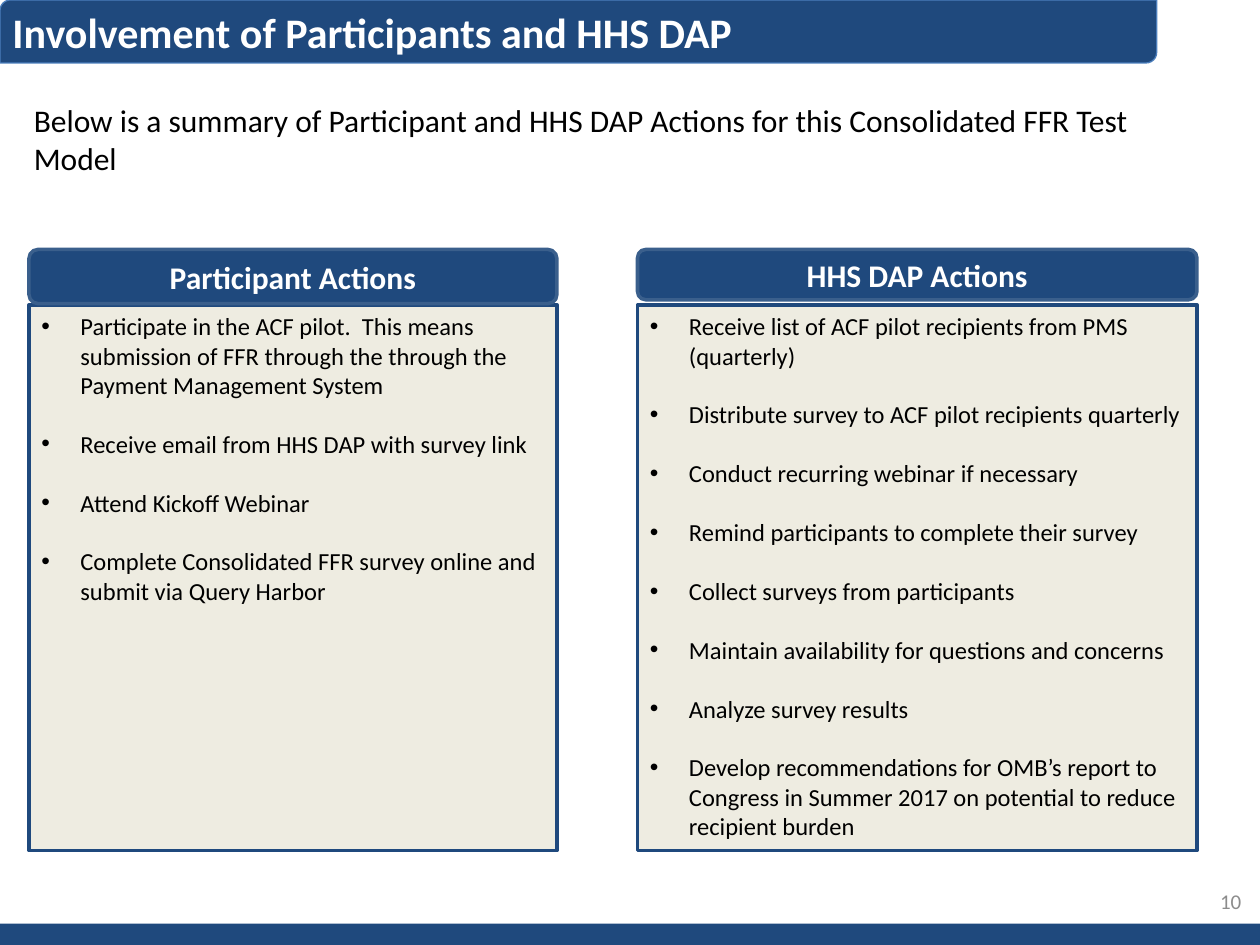
from dataclasses import dataclass

from lxml import etree
from pptx import Presentation
from pptx import util as u
from pptx.dml.color import RGBColor
from pptx.enum import shapes, text
from pptx.oxml.ns import qn

NAVY, HEADER_EDGE, TITLE_EDGE = "1F497D", "3A5F8C", "4B7EBC"
CREAM, WHITE, BLACK, GRAY = "EEECE1", "FFFFFF", "000000", "8C8C8C"
SHAPE = shapes.MSO_SHAPE
ALIGN = text.PP_ALIGN
ANCHOR = text.MSO_ANCHOR


@dataclass
class Box:
    left: float
    top: float
    width: float
    height: float

    def lengths(self) -> list:
        return [u.Inches(v) for v in (self.left, self.top, self.width, self.height)]


@dataclass
class ActionColumn:
    heading: str
    left: float
    width: float
    header_height: float
    actions: list[str]


COLUMNS = [
    ActionColumn("Participant Actions", 0.23, 4.19, 0.43, [
        "Participate in the ACF pilot.  This means submission of FFR through "
        "the through the Payment Management System",
        "Receive email from HHS DAP with survey link",
        "Attend Kickoff Webinar",
        "Complete Consolidated FFR survey online and submit via Query Harbor",
    ]),
    ActionColumn("HHS DAP Actions", 5.06, 4.44, 0.4, [
        "Receive list of ACF pilot recipients from PMS (quarterly)",
        "Distribute survey to ACF pilot recipients quarterly",
        "Conduct recurring webinar if necessary",
        "Remind participants to complete their survey",
        "Collect surveys from participants",
        "Maintain availability for questions and concerns",
        "Analyze survey results",
        "Develop recommendations for OMB’s report to Congress in Summer 2017 "
        "on potential to reduce recipient burden",
    ]),
]


def color(value: str) -> RGBColor:
    return RGBColor.from_string(value)


def add_block(slide, kind, box: Box, fill: str, line: str | None = None, weight: float = 2):
    shape = slide.shapes.add_shape(kind, *box.lengths())
    shape.shadow.inherit = False
    shape.fill.solid()
    shape.fill.fore_color.rgb = color(fill)
    if line:
        shape.line.color.rgb = color(line)
        shape.line.width = u.Pt(weight)
    else:
        shape.line.fill.background()
    return shape


def add_bullet(paragraph, indent: float = 0.31) -> None:
    properties = paragraph._p.get_or_add_pPr()
    properties.set("marL", str(u.Inches(indent)))
    properties.set("indent", str(-u.Inches(indent)))
    etree.SubElement(properties, qn("a:buFont")).set("typeface", "Arial")
    etree.SubElement(properties, qn("a:buChar")).set("char", "•")


def write(shape, *lines: str, size: float, ink: str = BLACK, bold: bool = False,
          align=ALIGN.LEFT, anchor=ANCHOR.TOP, bullets: bool = False,
          gap: float = 0, grow: bool = False) -> None:
    frame = shape.text_frame
    frame.word_wrap = True
    frame.vertical_anchor = anchor
    if grow:
        frame.auto_size = text.MSO_AUTO_SIZE.SHAPE_TO_FIT_TEXT
    for index, line in enumerate(lines):
        paragraph = frame.add_paragraph() if index else frame.paragraphs[0]
        paragraph.alignment = align
        if index and gap:
            paragraph.space_before = u.Pt(gap)
        if bullets:
            add_bullet(paragraph)
        run = paragraph.add_run()
        run.text = line
        run.font.name = "Calibri"
        run.font.size = u.Pt(size)
        run.font.bold = bold
        run.font.color.rgb = color(ink)


def add_text(slide, box: Box, content: str, **style) -> None:
    write(slide.shapes.add_textbox(*box.lengths()), content, **style)


def add_column(slide, column: ActionColumn) -> None:
    body = add_block(slide, SHAPE.RECTANGLE,
                     Box(column.left, 2.42, column.width, 4.33), CREAM, NAVY)
    write(body, *column.actions, size=14, bullets=True, gap=16.8)
    header = add_block(slide, SHAPE.ROUNDED_RECTANGLE,
                       Box(column.left, 1.98, column.width, column.header_height),
                       NAVY, HEADER_EDGE)
    write(header, column.heading, size=18, ink=WHITE, bold=True,
          align=ALIGN.CENTER, anchor=ANCHOR.MIDDLE)


def main() -> None:
    presentation = Presentation()
    presentation.slide_width, presentation.slide_height = u.Inches(10), u.Inches(7.5)
    slide = presentation.slides.add_slide(presentation.slide_layouts[6])

    # Footer band and title banner
    add_block(slide, SHAPE.RECTANGLE, Box(0, 7.33, 10, 0.17), NAVY)
    add_block(slide, SHAPE.ROUND_2_DIAG_RECTANGLE, Box(0, 0, 9.18, 0.5),
              NAVY, TITLE_EDGE, 0.75)

    # Page number, title and introduction
    add_text(slide, Box(7.62, 6.95, 2.33, 0.4), "10", size=12, ink=GRAY,
             align=ALIGN.RIGHT, anchor=ANCHOR.MIDDLE)
    add_text(slide, Box(0, 0, 9, 0.5), "Involvement of Participants and HHS DAP",
             size=24, ink=WHITE, bold=True, grow=True)
    add_text(slide, Box(0.17, 0.75, 9, 0.71),
             "Below is a summary of Participant and HHS DAP Actions for this "
             "Consolidated FFR Test Model", size=18, grow=True)

    # Action columns
    for column in COLUMNS:
        add_column(slide, column)

    presentation.save("out.pptx")


if __name__ == "__main__":
    main()
